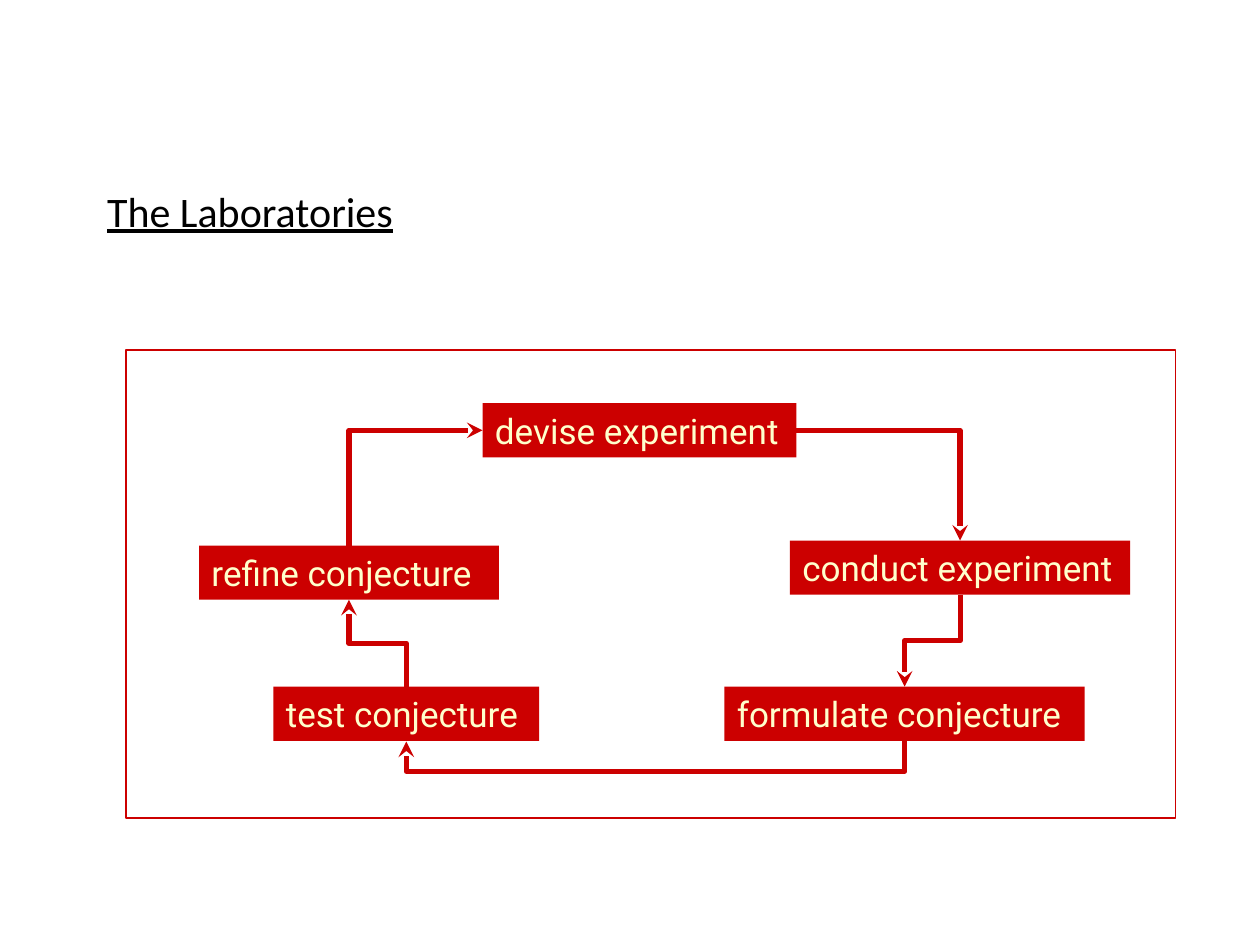
from lxml import etree
from pptx import Presentation
from pptx.dml.color import RGBColor as RGB
from pptx.enum.shapes import MSO_CONNECTOR as CONN, MSO_SHAPE as SHAPE
from pptx.enum.text import MSO_ANCHOR as ANCHOR, PP_ALIGN as ALIGN
from pptx.oxml.ns import qn
from pptx.util import Inches, Pt

COLORS = {"red": "CC0000", "cream": "FFFFCC", "black": "000000"}
TITLE = "The Laboratories"
BOX_H = 0.43

# Steps of the cycle: left, top, width
STEPS = {
    "devise experiment": (3.83, 3.2, 2.49),
    "conduct experiment": (6.27, 4.29, 2.7),
    "formulate conjecture": (5.75, 5.45, 2.86),
    "test conjecture": (2.17, 5.45, 2.11),
    "refine conjecture": (1.58, 4.33, 2.38),
}

# Arrows: from step, side, to step, side, preset, turn, flip, bend
LINKS = [
    ("devise experiment", "right", "conduct experiment", "top", 2, 0, False, None),
    ("conduct experiment", "bottom", "formulate conjecture", "top", 3, 90, False, 0.5),
    ("formulate conjecture", "bottom", "test conjecture", "bottom", 3, 90, False, 25),
    ("test conjecture", "top", "refine conjecture", "bottom", 3, 90, True, 0.5),
    ("refine conjecture", "top", "devise experiment", "left", 2, 270, False, None),
]


def color(name):
    return RGB.from_string(COLORS[name])


def write(shape, text, *, font, size, ink, underline=False):
    frame = shape.text_frame
    frame.word_wrap = True
    frame.vertical_anchor = ANCHOR.TOP
    frame.margin_right = 0
    par = frame.paragraphs[0]
    par.alignment = ALIGN.LEFT
    run = par.add_run()
    run.text = text
    run.font.name, run.font.size = font, Pt(size)
    run.font.underline = underline
    run.font.color.rgb = color(ink)


def add_box(slide, left, top, width, height):
    box = slide.shapes.add_shape(SHAPE.RECTANGLE, *map(Inches, (left, top, width, height)))
    box.shadow.inherit = False
    return box


def port(step, side):
    left, top, width = STEPS[step]
    return {
        "left": (left, top + BOX_H / 2),
        "right": (left + width, top + BOX_H / 2),
        "top": (left + width / 2, top),
        "bottom": (left + width / 2, top + BOX_H),
    }[side]


def add_link(slide, start, end, preset, turn, flip, bend):
    (x1, y1), (x2, y2) = start, end
    wide, high = abs(x2 - x1), abs(y2 - y1)
    if turn:  # a quarter turn swaps the two sides
        wide, high = max(high, 0.01), wide
    left, top = (x1 + x2 - wide) / 2, (y1 + y2 - high) / 2
    link = slide.shapes.add_connector(
        CONN.ELBOW, *map(Inches, (left, top, left + wide, top + high)))
    link.line.color.rgb = color("red")
    link.line.width = Pt(3)

    # Route, arrowhead and no shadow
    props = link._element.spPr
    frame = props.find(qn("a:xfrm"))
    if turn:
        frame.set("rot", str(turn * 60000))
    if flip:
        frame.set("flipH", "1")
    geom = props.find(qn("a:prstGeom"))
    geom.set("prst", f"bentConnector{preset}")
    if bend is not None:
        guides = geom.find(qn("a:avLst"))
        if guides is None:
            guides = etree.SubElement(geom, qn("a:avLst"))
        etree.SubElement(guides, qn("a:gd"), name="adj1", fmla=f"val {int(bend * 100000)}")
    etree.SubElement(props.find(qn("a:ln")), qn("a:tailEnd"), type="stealth")
    etree.SubElement(props, qn("a:effectLst"))


def main():
    deck = Presentation()
    deck.slide_width, deck.slide_height = Inches(10), Inches(7.5)
    slide = deck.slides.add_slide(deck.slide_layouts[5])

    # Title
    title = slide.shapes.title
    title.left, title.top, title.width, title.height = map(Inches, (0.75, 1.42, 8.08, 1.25))
    write(title, TITLE, font="Calibri", size=24, ink="black", underline=True)

    # Frame around the cycle
    frame = add_box(slide, 1, 2.78, 8.33, 3.71)
    frame.fill.background()
    frame.line.color.rgb = color("red")
    frame.line.width = Pt(1)

    # Arrows, then steps
    for first, out, second, into, *route in LINKS:
        add_link(slide, port(first, out), port(second, into), *route)
    for text, place in STEPS.items():
        box = add_box(slide, *place, BOX_H)
        box.fill.solid()
        box.fill.fore_color.rgb = color("red")
        box.line.fill.background()
        write(box, text, font="Roboto", size=20, ink="cream")

    deck.save("out.pptx")


if __name__ == "__main__":
    main()
